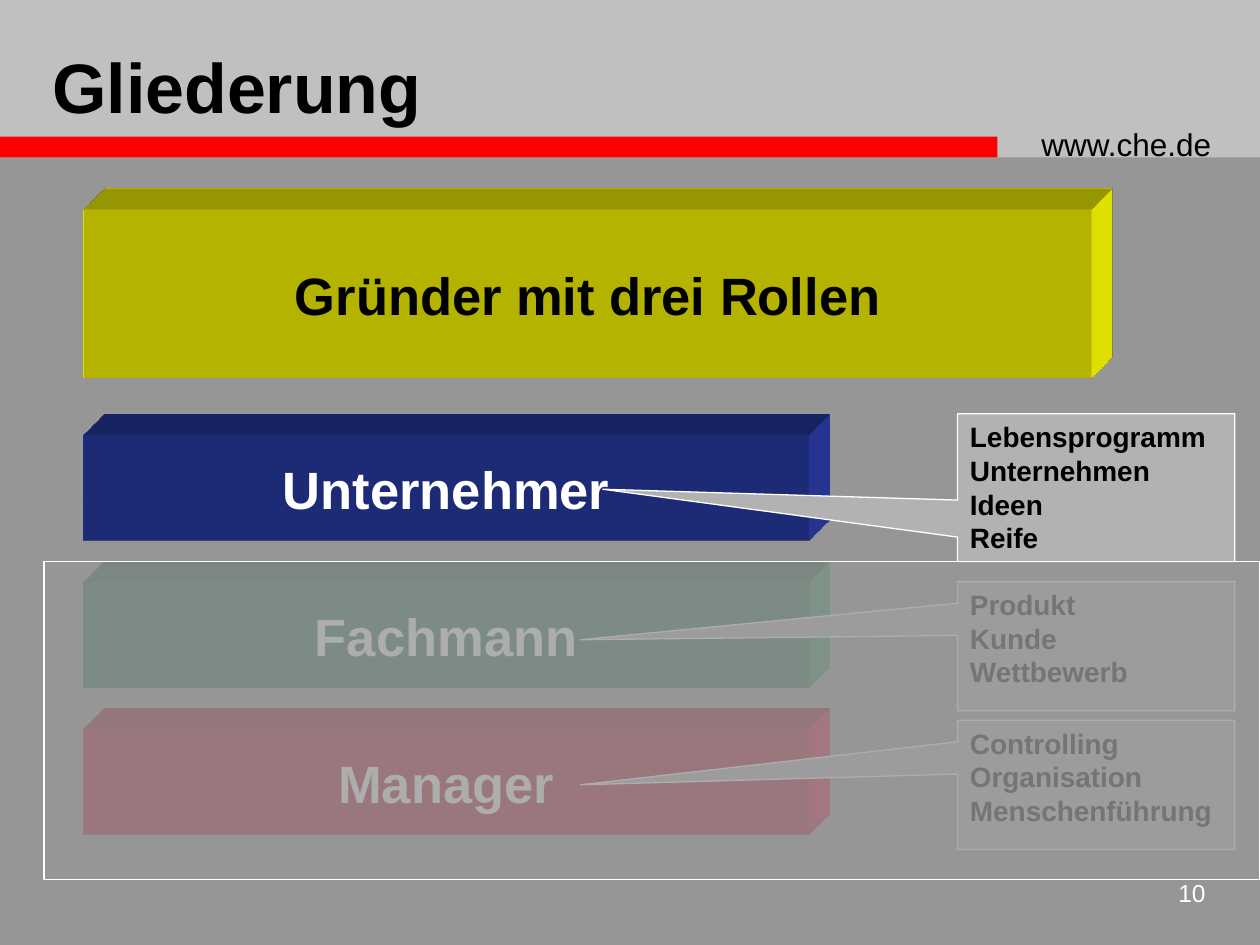
from lxml import etree
from pptx import Presentation
from pptx.dml.color import RGBColor
from pptx.enum.shapes import MSO_SHAPE
from pptx.enum.text import MSO_ANCHOR, PP_ALIGN
from pptx.oxml import parse_xml
from pptx.oxml.ns import qn
from pptx.util import Inches, Pt

RECTANGLE = MSO_SHAPE.RECTANGLE
CALLOUT = MSO_SHAPE.RECTANGULAR_CALLOUT
TOP, MIDDLE = MSO_ANCHOR.TOP, MSO_ANCHOR.MIDDLE
LEFT, CENTER, RIGHT = PP_ALIGN.LEFT, PP_ALIGN.CENTER, PP_ALIGN.RIGHT
DRAWING = "http://schemas.openxmlformats.org/drawingml/2006/main"

presentation = Presentation()
presentation.slide_width = Inches(10)
presentation.slide_height = Inches(7.5)
column = presentation.slide_width / 120
row = presentation.slide_height / 90
slide = presentation.slides.add_slide(presentation.slide_layouts[6])
slide.background.fill.solid()
slide.background.fill.fore_color.rgb = RGBColor.from_string("969696")


def add_box(kind, grid, fill, line=None):
    left, top, width, height = grid
    shape = slide.shapes.add_shape(
        kind, round(left * column), round(top * row), round(width * column), round(height * row)
    )
    shape.shadow.inherit = False
    if fill:
        shape.fill.solid()
        shape.fill.fore_color.rgb = RGBColor.from_string(fill)
    else:
        shape.fill.background()
    if line:
        shape.line.color.rgb = RGBColor.from_string(line)
        shape.line.width = Pt(0.75)
    else:
        shape.line.fill.background()
    return shape


def write(shape, lines, size, color, bold=True, align=LEFT, anchor=TOP, wrap=True):
    frame = shape.text_frame
    frame.word_wrap = wrap
    frame.vertical_anchor = anchor
    frame.text = "\n".join(lines)
    for paragraph in frame.paragraphs:
        paragraph.alignment = align
        paragraph.font.name = "Arial"
        paragraph.font.size = Pt(size)
        paragraph.font.bold = bold
        paragraph.font.color.rgb = RGBColor.from_string(color)


add_box(RECTANGLE, (0, 0, 120, 15), "C0C0C0")
add_box(RECTANGLE, (0, 13, 95, 2), "FF0000")

labels = [
    ("www.che.de", (98, 11.3, 21, 4.8), 18, "000000", False, LEFT, TOP),
    ("10", (109, 83, 7, 5), 14, "FFFFFF", False, RIGHT, TOP),
    ("Gliederung", (3.8, 3.6, 73.2, 9), 40, "000000", True, LEFT, MIDDLE),
]
for text, (left, top, width, height), size, color, bold, align, anchor in labels:
    label = slide.shapes.add_textbox(
        round(left * column), round(top * row), round(width * column), round(height * row)
    )
    write(label, [text], size, color, bold, align, anchor)

bars = [
    ("Gründer mit drei Rollen", (8, 20, 96, 16), "FFFF00", "000000"),
    ("Unternehmer", (8, 41.5, 69, 10), "293BA5", "FFFFFF"),
    ("Fachmann", (8, 55.5, 69, 10), "339966", "FFFFFF"),
    ("Manager", (8, 69.5, 69, 10), "F00E34", "FFFFFF"),
]
for text, grid, fill, color in bars:
    bar = add_box(RECTANGLE, grid, fill)
    write(bar, [text], 30, color, align=CENTER, anchor=MIDDLE, wrap=False)
    scene = f"""<a:scene3d xmlns:a="{DRAWING}">
        <a:camera prst="legacyObliqueTopRight"/><a:lightRig rig="legacyFlat3" dir="b"/>
        </a:scene3d>"""
    extrusion = f"""<a:sp3d xmlns:a="{DRAWING}" extrusionH="430200" prstMaterial="legacyMatte">
        <a:bevelT w="13500" h="13500" prst="angle"/><a:bevelB w="13500" h="13500" prst="angle"/>
        <a:extrusionClr><a:srgbClr val="{fill}"/></a:extrusionClr></a:sp3d>"""
    for markup in (scene, extrusion):
        bar._element.spPr.append(parse_xml(markup))

callouts = [
    (["Lebensprogramm", "Unternehmen", "Ideen", "Reife"], 39.4, 14.1, (-1.78, 0.01)),
    (["Produkt", "Kunde", "Wettbewerb"], 55.4, 12.3, (-1.86, -0.05)),
    (["Controlling", "Organisation", "Menschenführung"], 68.6, 12.3, (-1.86, 0)),
]
for lines, top, height, tip in callouts:
    callout = add_box(CALLOUT, (91.2, top, 26.4, height), "B2B2B2", "FFFFFF")
    callout.adjustments[0], callout.adjustments[1] = tip
    write(callout, lines, 16, "000000")

veil = add_box(RECTANGLE, (4.2, 53.5, 115.8, 30.3), "969696", "FFFFFF")
veil_color = veil._element.spPr.find(qn("a:solidFill")).find(qn("a:srgbClr"))
etree.SubElement(veil_color, qn("a:alpha")).set("val", "78000")

presentation.save("out.pptx")
